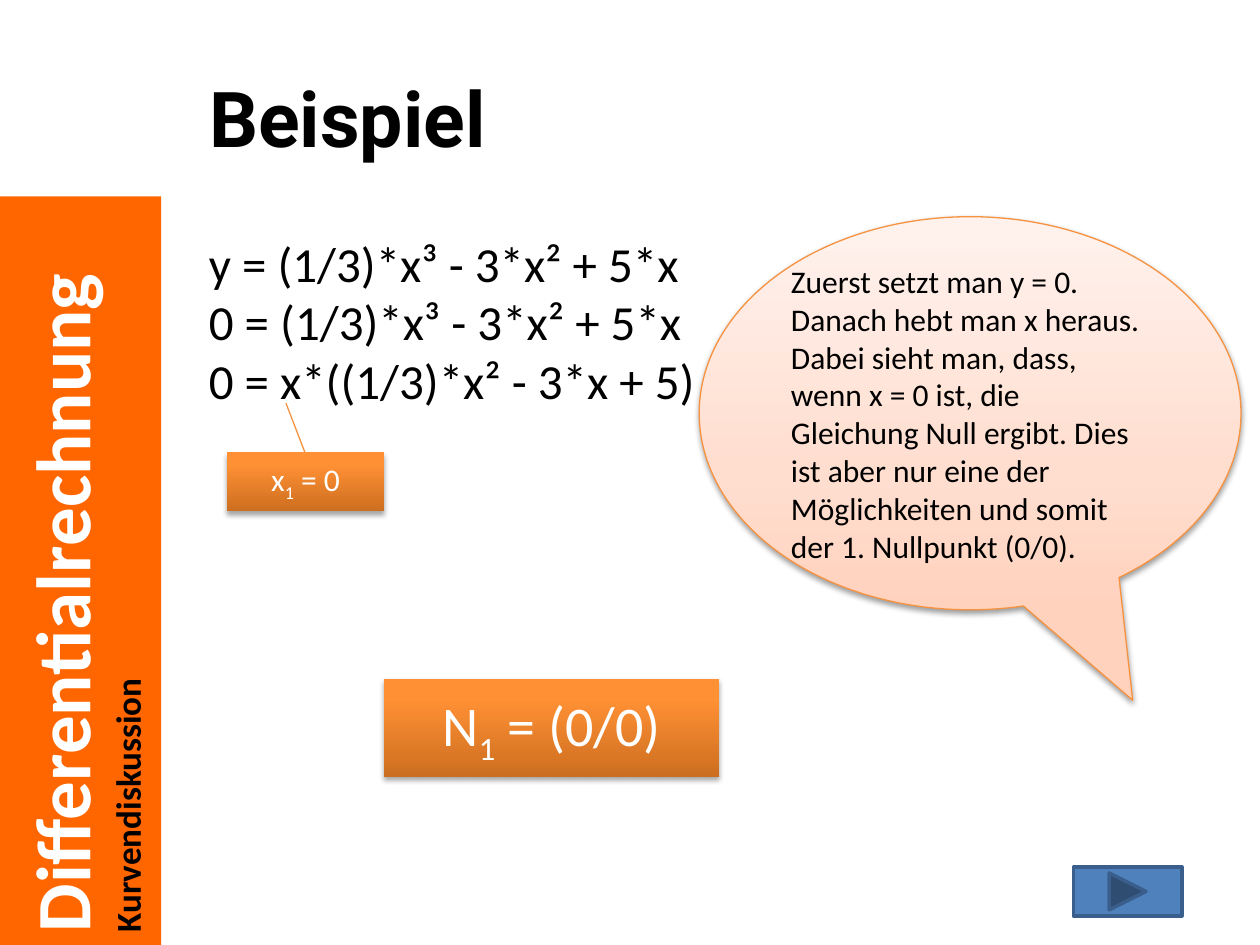
from pptx import Presentation
from pptx.dml.color import RGBColor
from pptx.enum.shapes import MSO_CONNECTOR, MSO_SHAPE as SHAPE
from pptx.enum.text import MSO_ANCHOR as ANCHOR, PP_ALIGN as ALIGN
from pptx.oxml.ns import qn
from pptx.util import Inches, Pt
from lxml.etree import SubElement

COLORS = {
    "sidebar": "FF6600", "white": "FFFFFF", "black": "000000",
    "accent": "F69240", "button": "4F81BD", "button_line": "3A5F8C",
}
BOX_STOPS = [(0, "CC6E20"), (80, "FF9034"), (100, "FF9136")]
CALLOUT_STOPS = [(0, "FFD2BD"), (35, "FFDED0"), (100, "FFF2ED")]

EQUATIONS = [
    "y = (1/3)*x³ - 3*x² + 5*x",
    "0 = (1/3)*x³ - 3*x² + 5*x",
    "0 = x*((1/3)*x² - 3*x + 5)",
]
EXPLANATION = (
    "Zuerst setzt man y = 0. Danach hebt man x heraus. Dabei sieht man, dass, "
    "wenn x = 0 ist, die Gleichung Null ergibt. Dies ist aber nur eine der "
    "Möglichkeiten und somit der 1. Nullpunkt (0/0)."
)


def rgb(name):
    return RGBColor.from_string(COLORS[name])


def add_run(p, text, size, color, bold=False, font="Calibri"):
    r = p.add_run()
    r.text = text
    r.font.name, r.font.size, r.font.bold = font, Pt(size), bold
    r.font.color.rgb = rgb(color)
    return r


def get_paragraph(tf, i):
    """Return the frame's first paragraph for i = 0, otherwise a new one."""
    return tf.paragraphs[0] if i == 0 else tf.add_paragraph()


def add_shape(slide, kind, box, fill=None, line=None, width=0.75):
    sp = slide.shapes.add_shape(kind, *map(Inches, box))
    sp.shadow.inherit = False
    if fill:
        sp.fill.solid()
        sp.fill.fore_color.rgb = rgb(fill)
    if line:
        sp.line.color.rgb = rgb(line)
        sp.line.width = Pt(width)
    else:
        sp.line.fill.background()
    tf = sp.text_frame
    tf.word_wrap = True
    tf.vertical_anchor = ANCHOR.MIDDLE
    return sp


def set_gradient(sp, stops):
    """Fill from bottom to top with (percent, colour) stops."""
    sp.fill.gradient()
    sp.fill.gradient_angle = 90
    stop_list = sp._element.spPr.find(qn("a:gradFill")).find(qn("a:gsLst"))
    for old in list(stop_list):
        stop_list.remove(old)
    for percent, color in stops:
        stop = SubElement(stop_list, qn("a:gs"), pos=str(percent * 1000))
        SubElement(stop, qn("a:srgbClr"), val=color)


def set_shadow(sp, alpha, distance):
    effects = sp._element.spPr.find(qn("a:effectLst"))
    shadow = SubElement(effects, qn("a:outerShdw"), blurRad=str(Pt(3.1)),
                        dist=str(Pt(distance)), dir="5400000", rotWithShape="0")
    color = SubElement(shadow, qn("a:srgbClr"), val=COLORS["black"])
    SubElement(color, qn("a:alpha"), val=str(alpha * 1000))


def add_sidebar(slide):
    sp = add_shape(slide, SHAPE.RECTANGLE, (0, 1.56, 1.28, 5.94), "sidebar")
    tf = sp.text_frame
    tf._txBody.bodyPr.set("vert", "vert270")
    lines = [("Differentialrechnung", 44, "white"), ("Kurvendiskussion", 20, "black")]
    for i, (text, size, color) in enumerate(lines):
        p = get_paragraph(tf, i)
        p.alignment = ALIGN.LEFT
        add_run(p, text, size, color, bold=True)


def add_title(slide, text):
    title = slide.shapes.title
    title.left, title.top, title.width, title.height = map(
        Inches, (1.56, 0.3, 7.94, 1.25))
    title.text_frame.vertical_anchor = ANCHOR.MIDDLE
    p = title.text_frame.paragraphs[0]
    p.alignment = ALIGN.LEFT
    add_run(p, text, 44, "black", bold=True, font="Roboto")


def add_callout(slide, text):
    sp = add_shape(slide, SHAPE.OVAL_CALLOUT, (5.55, 1.72, 4.3, 3.12), line="accent")
    sp.adjustments[0], sp.adjustments[1] = 0.3, 0.73
    set_gradient(sp, CALLOUT_STOPS)
    set_shadow(sp, 38, 1.6)
    p = sp.text_frame.paragraphs[0]
    p.alignment = ALIGN.LEFT
    add_run(p, text, 18, "black")


def add_equations(slide, lines):
    tb = slide.shapes.add_textbox(*map(Inches, (1.56, 1.8, 4.77, 1.51)))
    tf = tb.text_frame
    tf.word_wrap = True
    for i, text in enumerate(lines):
        add_run(get_paragraph(tf, i), text, 28, "black")


def add_result(slide, box, symbol, value, size):
    """Add an orange box reading symbol, subscript 1 and value."""
    sp = add_shape(slide, SHAPE.RECTANGLE, box)
    set_gradient(sp, BOX_STOPS)
    set_shadow(sp, 35, 1.8)
    p = sp.text_frame.paragraphs[0]
    p.alignment = ALIGN.CENTER
    add_run(p, symbol, size, "white")
    index = add_run(p, "1", size, "white")
    index.font._element.set("baseline", "-25000")
    add_run(p, f" = {value}", size, "white")


def add_line(slide, start, end):
    line = slide.shapes.add_connector(
        MSO_CONNECTOR.STRAIGHT, *map(Inches, start + end))
    line.line.color.rgb = rgb("accent")
    line.line.width = Pt(0.75)
    SubElement(line._element.spPr, qn("a:effectLst"))


def main():
    prs = Presentation()
    prs.slide_width, prs.slide_height = Inches(10), Inches(7.5)
    slide = prs.slides.add_slide(prs.slide_layouts[5])
    add_sidebar(slide)
    add_title(slide, "Beispiel")
    add_callout(slide, EXPLANATION)
    add_equations(slide, EQUATIONS)
    add_result(slide, (1.8, 3.59, 1.25, 0.47), "x", "0", 18)
    add_line(slide, (2.27, 3.2), (2.42, 3.59))
    add_result(slide, (3.05, 5.39, 2.66, 0.78), "N", "(0/0)", 32)
    add_shape(slide, SHAPE.ACTION_BUTTON_FORWARD_OR_NEXT,
              (8.52, 6.88, 0.86, 0.39), "button", "button_line", 2)
    prs.save("out.pptx")


if __name__ == "__main__":
    main()
